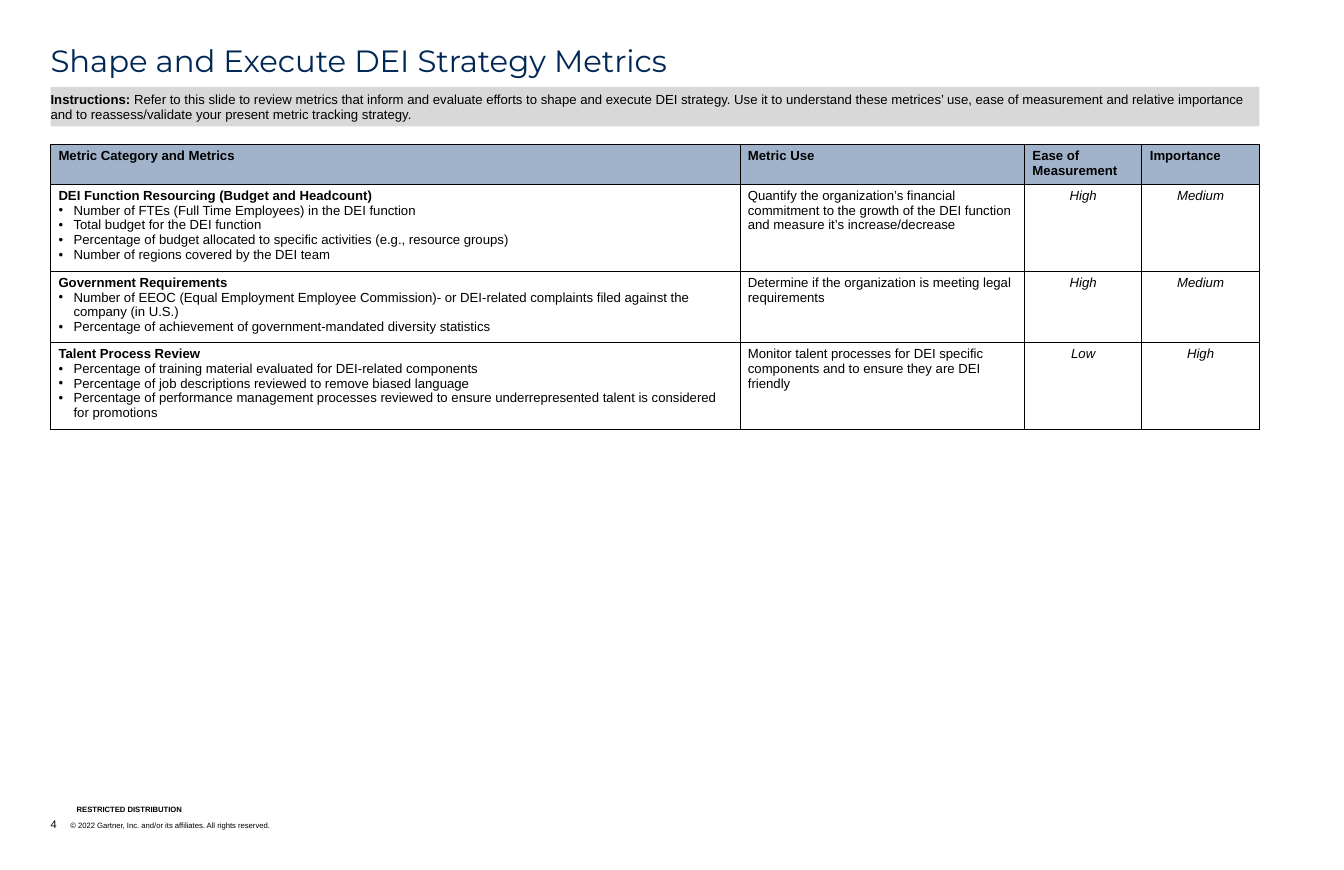
"""Build the DEI strategy metrics slide."""
from dataclasses import dataclass

from lxml import etree
from pptx import Presentation
from pptx.dml.color import RGBColor
from pptx.enum.shapes import MSO_SHAPE
from pptx.enum.text import MSO_ANCHOR, PP_ALIGN
from pptx.oxml.ns import qn
from pptx.util import Emu, Inches, Pt

RECTANGLE = MSO_SHAPE.RECTANGLE
TOP, BOTTOM = MSO_ANCHOR.TOP, MSO_ANCHOR.BOTTOM
LEFT, CENTER = PP_ALIGN.LEFT, PP_ALIGN.CENTER

SLIDE_WIDTH, SLIDE_HEIGHT = Inches(17), Inches(11)
GRID_COLUMNS, GRID_ROWS = 170, 110
MARGIN, CONTENT_SPAN = 6.4, 152.9

BLACK, NAVY, STEEL, GRAY = "000000", "002856", "A1B3CA", "D8D8D8"
BODY_FONT, TITLE_FONT = "Arial", "Montserrat"

HEADINGS = ("Metric Category and Metrics", "Metric Use", "Ease of Measurement", "Importance")
COLUMN_SPANS = (87.2, 36, 14.85, 14.85)
HEADER_SPAN = 4.8


@dataclass(frozen=True)
class Area:
    """A block of the slide grid."""
    column: float
    row: float
    columns: float
    rows: float


@dataclass(frozen=True)
class Span:
    """A piece of text with one look."""
    text: str
    size: float = 12
    bold: bool = False
    italic: bool = False
    color: str = BLACK
    font: str = BODY_FONT


@dataclass(frozen=True)
class Category:
    """One body row of the metrics table."""
    name: str
    metrics: tuple[str, ...]
    use: str
    ease: str
    importance: str
    rows: float


CATEGORIES = (
    Category(
        "DEI Function Resourcing (Budget and Headcount)",
        ("Number of FTEs (Full Time Employees) in the DEI function",
         "Total budget for the DEI function",
         "Percentage of budget allocated to specific activities (e.g., resource groups)",
         "Number of regions covered by the DEI team"),
        "Quantify the organization’s financial commitment to the growth of the DEI function "
        "and measure it’s increase/decrease",
        "High", "Medium", 10.3),
    Category(
        "Government Requirements",
        ("Number of EEOC (Equal Employment Employee Commission)- or DEI-related complaints "
         "filed against the company (in U.S.)",
         "Percentage of achievement of government-mandated diversity statistics"),
        "Determine if the organization is meeting legal requirements",
        "High", "Medium", 8.5),
    Category(
        "Talent Process Review",
        ("Percentage of training material evaluated for DEI-related components",
         "Percentage of job descriptions reviewed to remove biased language",
         "Percentage of performance management processes reviewed to ensure "
         "underrepresented talent is considered for promotions"),
        "Monitor talent processes for DEI specific components and to ensure they are DEI friendly",
        "Low", "High", 10.3),
)


def across(columns: float) -> Emu:
    """Return the width of a number of grid columns."""
    return Emu(round(SLIDE_WIDTH * columns / GRID_COLUMNS))


def down(rows: float) -> Emu:
    """Return the height of a number of grid rows."""
    return Emu(round(SLIDE_HEIGHT * rows / GRID_ROWS))


def place(area: Area) -> tuple[Emu, Emu, Emu, Emu]:
    """Return left, top, width and height of an area."""
    return across(area.column), down(area.row), across(area.columns), down(area.rows)


def rgb(color: str) -> RGBColor:
    """Turn a hex string into a colour."""
    return RGBColor.from_string(color)


def write(paragraph, spans: tuple[Span, ...], align=LEFT) -> None:
    """Fill a paragraph with formatted spans."""
    paragraph.alignment = align
    for span in spans:
        run = paragraph.add_run()
        run.text = span.text
        run.font.name = span.font
        run.font.size = Pt(span.size)
        run.font.bold = span.bold
        run.font.italic = span.italic
        run.font.color.rgb = rgb(span.color)


def hang(paragraph, indent: Emu, bullet: str = "") -> None:
    """Give a paragraph a hanging indent and, if named, a bullet."""
    properties = paragraph._p.get_or_add_pPr()
    properties.set("marL", str(indent))
    properties.set("indent", str(-indent))
    if bullet:
        bullet_color = etree.SubElement(properties, qn("a:buClr"))
        etree.SubElement(bullet_color, qn("a:srgbClr"), val=BLACK)
        etree.SubElement(properties, qn("a:buFont"), typeface=BODY_FONT)
        etree.SubElement(properties, qn("a:buChar"), char=bullet)


def set_frame(frame, anchor, inset: float = 0) -> None:
    """Set wrapping, anchor and insets of a text frame."""
    frame.word_wrap = True
    frame.vertical_anchor = anchor
    frame.margin_left = frame.margin_right = 0
    frame.margin_top = frame.margin_bottom = down(inset)


def add_text(slide, area: Area, spans: tuple[Span, ...], anchor=TOP, spacing: float = 1):
    """Add a text box and return its paragraph."""
    frame = slide.shapes.add_textbox(*place(area)).text_frame
    set_frame(frame, anchor)
    paragraph = frame.paragraphs[0]
    write(paragraph, spans)
    paragraph.line_spacing = spacing
    return paragraph


def add_instructions(slide, area: Area, spans: tuple[Span, ...]) -> None:
    """Add the shaded instruction band."""
    band = slide.shapes.add_shape(RECTANGLE, *place(area))
    band.shadow.inherit = False
    band.fill.solid()
    band.fill.fore_color.rgb = rgb(GRAY)
    band.line.fill.background()
    set_frame(band.text_frame, TOP, 0.5)
    write(band.text_frame.paragraphs[0], spans)


def style_cell(cell, fill: str = "") -> None:
    """Draw the borders of a cell and set its fill."""
    properties = cell._tc.get_or_add_tcPr()
    for side in ("L", "R", "T", "B"):
        border = etree.SubElement(properties, qn(f"a:ln{side}"), w=str(Pt(1)))
        solid = etree.SubElement(border, qn("a:solidFill"))
        etree.SubElement(solid, qn("a:srgbClr"), val=BLACK)
    if fill:
        cell.fill.solid()
        cell.fill.fore_color.rgb = rgb(fill)
    else:
        cell.fill.background()


def add_metrics_table(slide, area: Area) -> None:
    """Add the table of metric categories."""
    table = slide.shapes.add_table(len(CATEGORIES) + 1, len(HEADINGS), *place(area)).table
    table.first_row = table.horz_banding = False
    for column, span in zip(table.columns, COLUMN_SPANS):
        column.width = across(span)
    table.rows[0].height = down(HEADER_SPAN)
    for index, heading in enumerate(HEADINGS):
        cell = table.cell(0, index)
        style_cell(cell, STEEL)
        write(cell.text_frame.paragraphs[0], (Span(heading, bold=True),))
    for index, category in enumerate(CATEGORIES, 1):
        table.rows[index].height = down(category.rows)
        entries = (
            (Span(category.name, bold=True), LEFT),
            (Span(category.use), LEFT),
            (Span(category.ease, italic=True), CENTER),
            (Span(category.importance, italic=True), CENTER),
        )
        for cell, (span, align) in zip(table.rows[index].cells, entries):
            style_cell(cell)
            write(cell.text_frame.paragraphs[0], (span,), align)
        for metric in category.metrics:
            paragraph = table.cell(index, 0).text_frame.add_paragraph()
            hang(paragraph, across(1.9), "•")
            write(paragraph, (Span(metric),))


def main() -> None:
    """Build and save the slide."""
    deck = Presentation()
    deck.slide_width, deck.slide_height = SLIDE_WIDTH, SLIDE_HEIGHT
    slide = deck.slides.add_slide(deck.slide_layouts[6])
    add_text(slide, Area(9.7, 101.8, 32.3, 1.1),
             (Span("RESTRICTED DISTRIBUTION", 7, bold=True),), BOTTOM, 0.9)
    copyright_line = "\t© 2022 Gartner, Inc. and/or its affiliates. All rights reserved."
    footer = add_text(slide, Area(MARGIN, 103.3, 101.9, 1.7),
                      (Span("4", 10), Span(copyright_line, 7)), BOTTOM)
    hang(footer, across(2.5))
    add_text(slide, Area(MARGIN, 5.8, 157.2, 7.2),
             (Span("Shape and Execute DEI Strategy Metrics", 28, color=NAVY, font=TITLE_FONT),),
             spacing=0.9)
    table_rows = HEADER_SPAN + sum(category.rows for category in CATEGORIES)
    add_metrics_table(slide, Area(MARGIN, 18.3, CONTENT_SPAN, table_rows))
    add_instructions(slide, Area(MARGIN, 11, CONTENT_SPAN, 5), (
        Span("Instructions: ", bold=True),
        Span("Refer to this slide to review metrics that inform and evaluate efforts to shape and "
             "execute DEI strategy. Use it to understand these metrices’ use, ease of measurement "
             "and relative importance and to reassess/validate your present metric tracking "
             "strategy."),
    ))
    deck.save("out.pptx")


if __name__ == "__main__":
    main()
